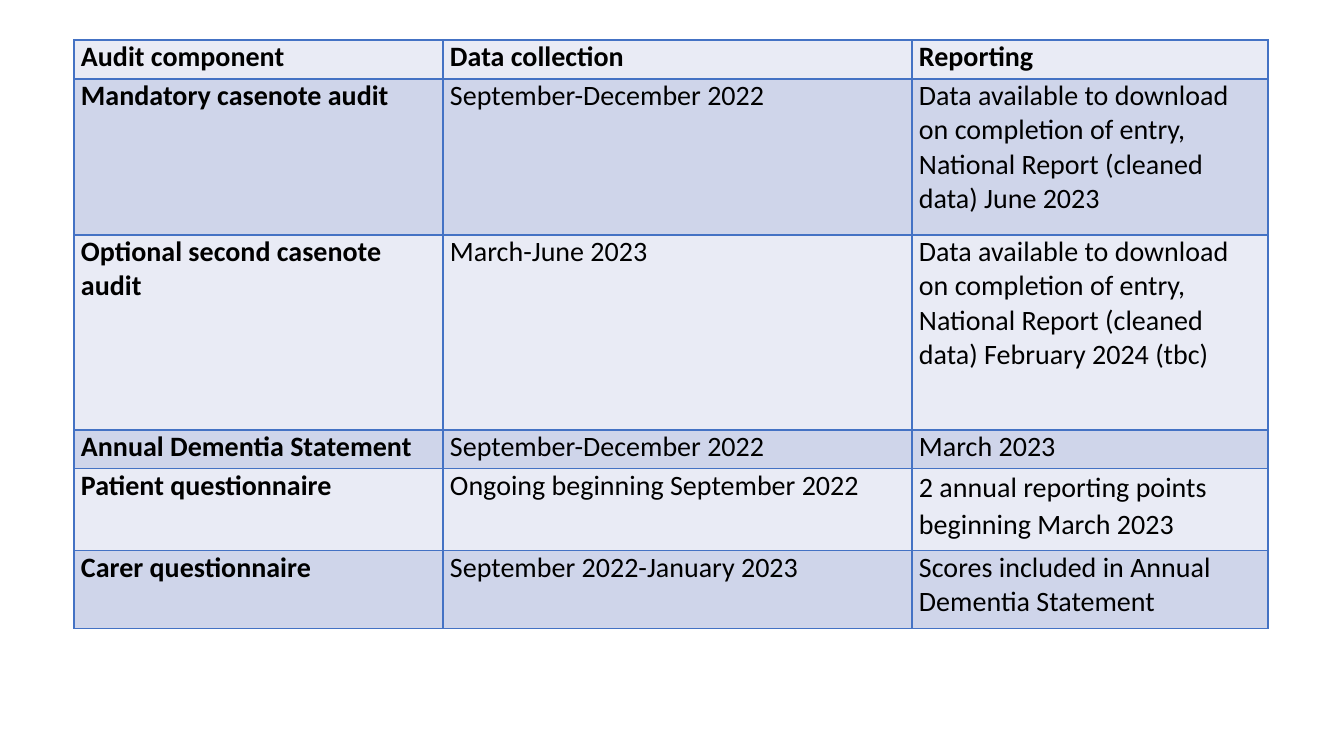
from dataclasses import dataclass

from lxml import etree
from pptx import Presentation
from pptx import util as u
from pptx.dml.color import RGBColor
from pptx.oxml import ns

SLIDE_WIDTH, SLIDE_HEIGHT = 1344, 756
EMU_PER_PX = 12192000 / SLIDE_WIDTH

BLACK = RGBColor(0x00, 0x00, 0x00)
BORDER_BLUE = RGBColor(0x44, 0x72, 0xC4)
BAND_FILLS = (RGBColor(0xE9, 0xEB, 0xF5), RGBColor(0xCF, 0xD5, 0xEA))

FONT_NAME = "Calibri"
FONT_SIZE = u.Pt(20)
BORDER_WIDTH = u.Pt(1)
CELL_INSET = 7
TABLE_LEFT, TABLE_TOP = 74, 40
COLUMN_WIDTHS = (369, 469, 356)


@dataclass(frozen=True)
class AuditRow:
    height: int
    component: str
    collection: str
    reporting: str
    reporting_spacing: float | None = None


AUDIT_ROWS = (
    AuditRow(39, "Audit component", "Data collection", "Reporting"),
    AuditRow(156, "Mandatory casenote audit", "September-December 2022",
             "Data available to download on completion of entry, "
             "National Report (cleaned data) June 2023"),
    AuditRow(195, "Optional second casenote audit", "March-June 2023",
             "Data available to download on completion of entry, "
             "National Report (cleaned data) February 2024 (tbc)"),
    AuditRow(39, "Annual Dementia Statement", "September-December 2022", "March 2023"),
    AuditRow(82, "Patient questionnaire", "Ongoing beginning September 2022",
             "2 annual reporting points beginning March 2023", 1.07),
    AuditRow(78, "Carer questionnaire", "September 2022-January 2023",
             "Scores included in Annual Dementia Statement"),
)


def px(length: int) -> u.Emu:
    return u.Emu(round(length * EMU_PER_PX))


def add_borders(cell) -> None:
    properties = cell._tc.get_or_add_tcPr()
    for side in ("lnL", "lnR", "lnT", "lnB"):
        line = etree.SubElement(properties, ns.qn(f"a:{side}"), w=str(int(BORDER_WIDTH)))
        fill = etree.SubElement(line, ns.qn("a:solidFill"))
        etree.SubElement(fill, ns.qn("a:srgbClr"), val=str(BORDER_BLUE))


def fill_cell(cell, words: str, bold: bool, fill: RGBColor,
              line_spacing: float | None) -> None:
    add_borders(cell)
    cell.fill.solid()
    cell.fill.fore_color.rgb = fill
    cell.margin_left = cell.margin_right = px(CELL_INSET)
    cell.margin_top = cell.margin_bottom = 0
    paragraph = cell.text_frame.paragraphs[0]
    paragraph.line_spacing = line_spacing
    run = paragraph.add_run()
    run.text = words
    run.font.name = FONT_NAME
    run.font.size = FONT_SIZE
    run.font.bold = bold
    run.font.color.rgb = BLACK


def add_audit_table(slide) -> None:
    table = slide.shapes.add_table(
        len(AUDIT_ROWS), len(COLUMN_WIDTHS), px(TABLE_LEFT), px(TABLE_TOP),
        px(sum(COLUMN_WIDTHS)), px(sum(row.height for row in AUDIT_ROWS)),
    ).table
    for column, width in zip(table.columns, COLUMN_WIDTHS):
        column.width = px(width)
    for row_index, row in enumerate(AUDIT_ROWS):
        table.rows[row_index].height = px(row.height)
        cells = (
            (row.component, None),
            (row.collection, None),
            (row.reporting, row.reporting_spacing),
        )
        for column_index, (words, spacing) in enumerate(cells):
            fill_cell(
                table.cell(row_index, column_index), words,
                row_index == 0 or column_index == 0,
                BAND_FILLS[row_index % 2], spacing,
            )


def main() -> None:
    presentation = Presentation()
    presentation.slide_width = px(SLIDE_WIDTH)
    presentation.slide_height = px(SLIDE_HEIGHT)
    slide = presentation.slides.add_slide(presentation.slide_layouts.get_by_name("Blank"))
    add_audit_table(slide)
    presentation.save("out.pptx")


if __name__ == "__main__":
    main()
